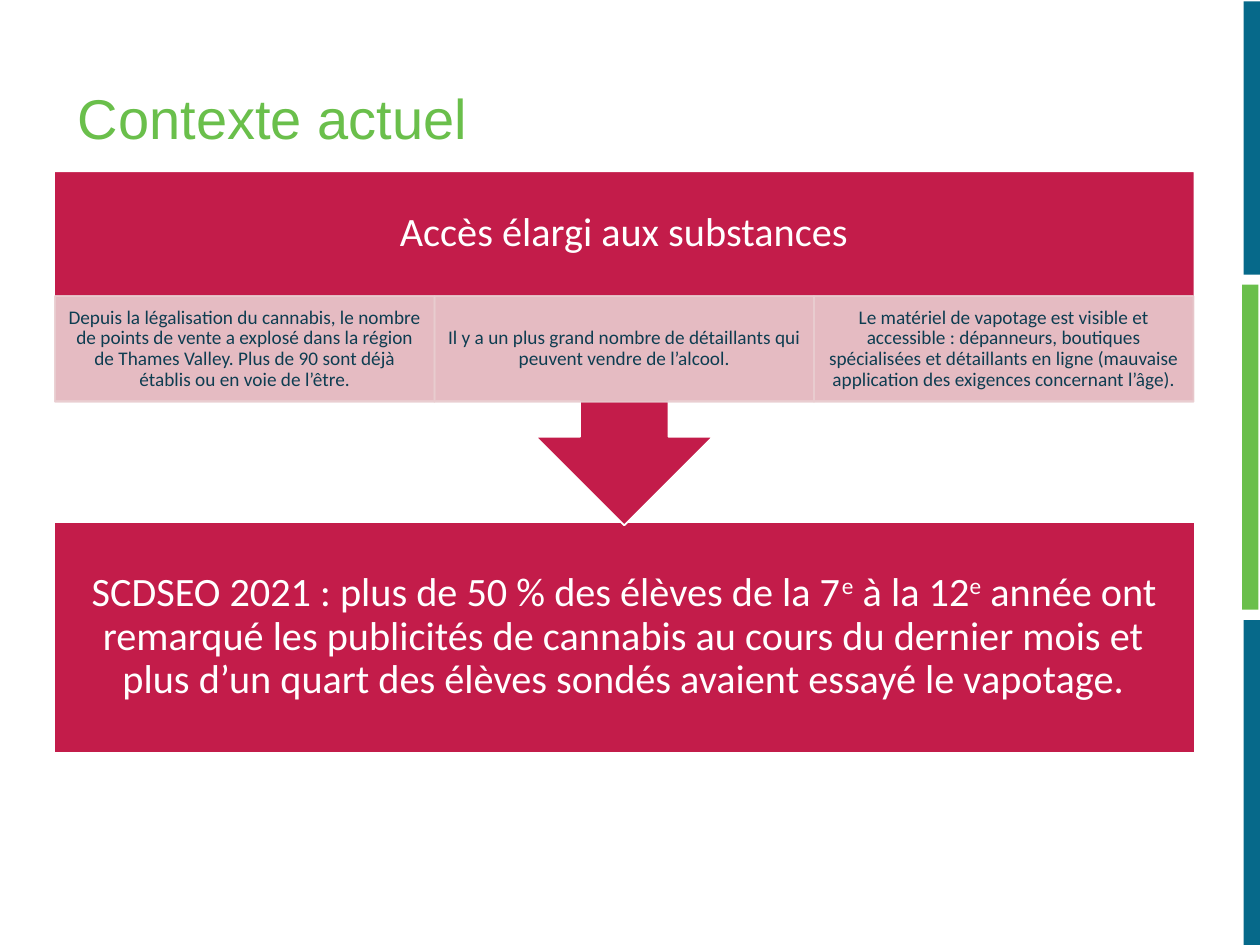
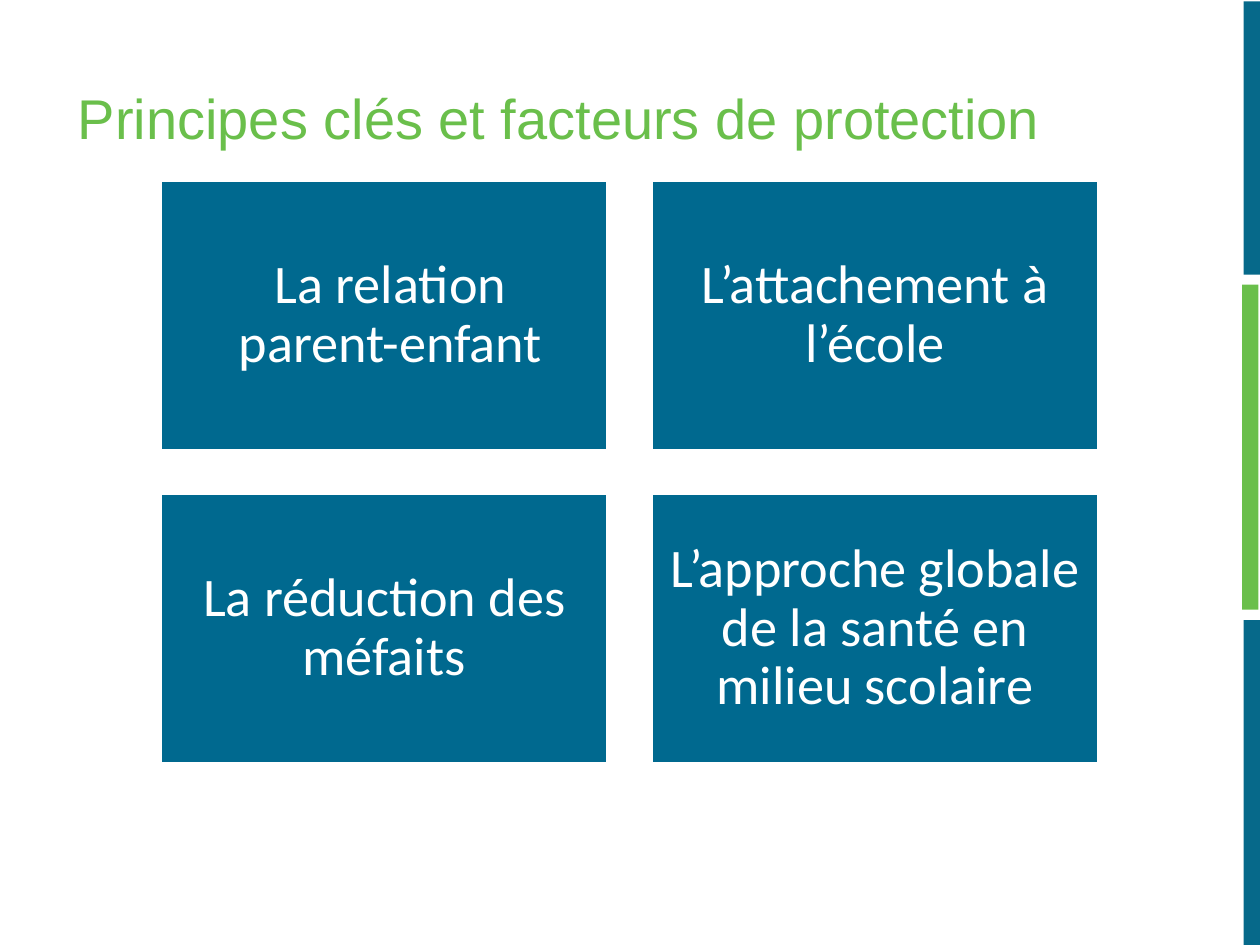
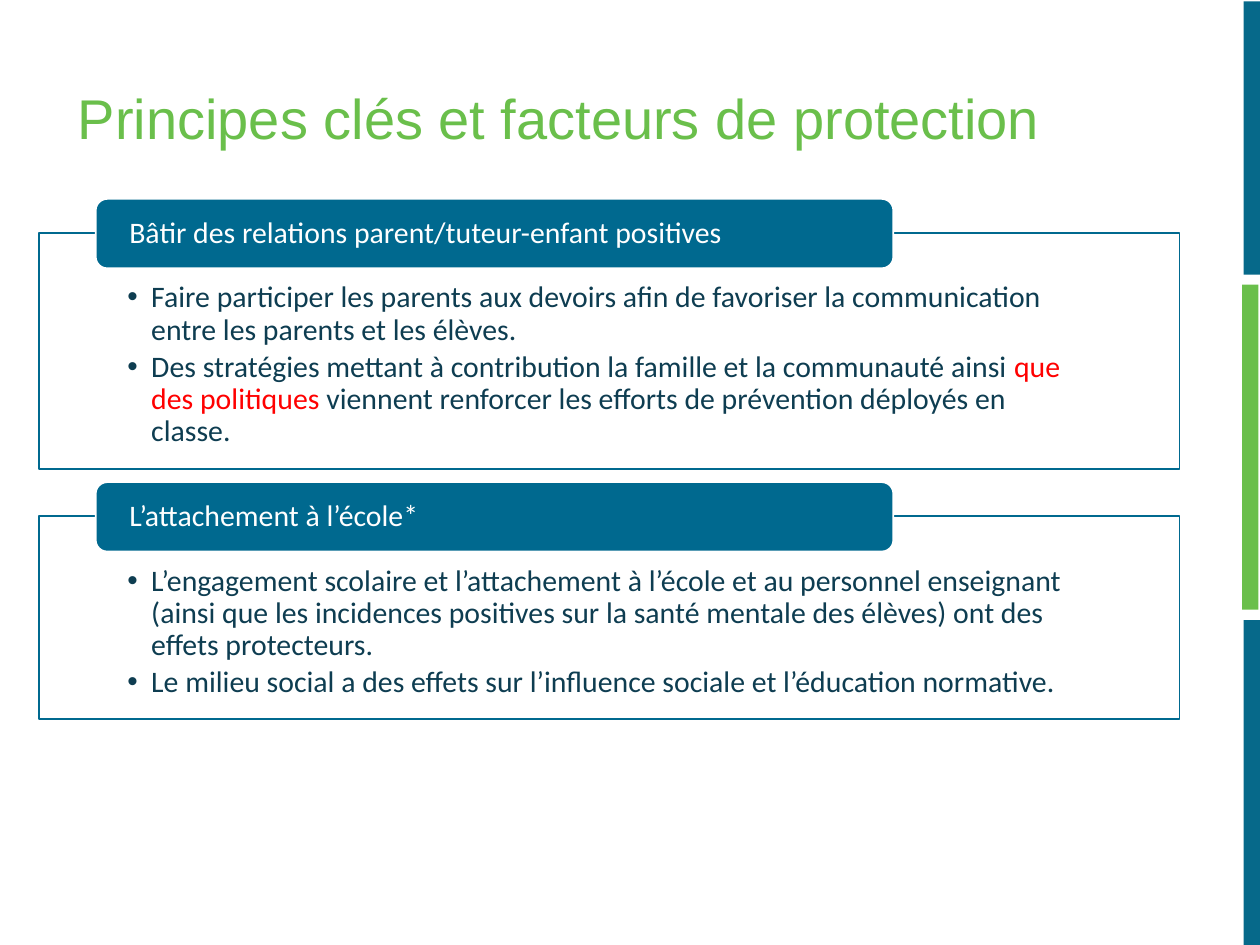
from lxml import etree
from pptx import Presentation
from pptx.dml.color import RGBColor
from pptx.enum import shapes, text
from pptx.oxml.ns import qn
from pptx.util import Cm, Pt

# Content: a paragraph is a list of (words, style) runs
ACCESS_TITLE = "Contexte actuel"
ACCESS_HEADING = "Accès élargi aux substances"
ACCESS_FACTS = [
    "Depuis la légalisation du cannabis, le nombre de points de vente a explosé dans la "
    "région de Thames Valley. Plus de 90 sont déjà établis ou en voie de l’être.",
    "Il y a un plus grand nombre de détaillants qui peuvent vendre de l’alcool.",
    "Le matériel de vapotage est visible et accessible : dépanneurs, boutiques spécialisées "
    "et détaillants en ligne (mauvaise application des exigences concernant l’âge).",
]
SURVEY = [
    ("SCDSEO 2021 : plus de 50 % des élèves de la 7", ""),
    ("e", "super"),
    (" à la 12", ""),
    ("e", "super"),
    (" année ont remarqué les publicités de cannabis au cours du dernier mois et plus "
     "d’un quart des élèves sondés avaient essayé le vapotage.", ""),
]
PRINCIPLES_TITLE = "Principes clés et facteurs de protection"
PRINCIPLES = [  # words, left indent
    ("La relation parent-enfant", 0.25),
    ("L’attachement à l’école", 0),
    ("La réduction des méfaits", 0),
    ("L’approche globale de la santé en milieu scolaire", 0),
]
FACTORS = [  # heading, frame height, bullets
    ("Bâtir des relations parent/tuteur-enfant positives", 4.75, [
        [("Faire participer les parents aux devoirs afin de favoriser la communication "
          "entre les parents et les élèves.", "")],
        [("Des stratégies mettant à contribution la famille et la communauté ainsi ", ""),
         ("que des politiques ", "red"),
         ("viennent renforcer les efforts de prévention déployés en classe.", "")],
    ]),
    ("L’attachement à l’école*", 4.09, [
        [("L’engagement scolaire et l’attachement à l’école et au personnel enseignant "
          "(ainsi que les incidences positives sur la santé mentale des élèves) ont des "
          "effets protecteurs.", "")],
        [("Le milieu social a des effets sur l’influence sociale et l’éducation "
          "normative.", "")],
    ]),
]

# Shared look
WHITE = RGBColor(0xFF, 0xFF, 0xFF)
GREEN = RGBColor(0x6A, 0xBF, 0x4B)
BAND_BLUE = RGBColor(0x06, 0x69, 0x8A)
BLUE = RGBColor(0x00, 0x69, 0x8F)
CRIMSON = RGBColor(0xC3, 0x1C, 0x4A)
PINK = RGBColor(0xE9, 0xCD, 0xD0)
NAVY = RGBColor(0x0E, 0x3D, 0x51)
RED = RGBColor(0xFF, 0x00, 0x00)
BANDS = [(25.07, 12.5, 6.55, BAND_BLUE), (25.04, 5.74, 6.55, GREEN), (25.07, 0.03, 5.51, BAND_BLUE)]
RECT = shapes.MSO_SHAPE.RECTANGLE
LEFT, CENTER = text.PP_ALIGN.LEFT, text.PP_ALIGN.CENTER
TOP, MIDDLE = text.MSO_ANCHOR.TOP, text.MSO_ANCHOR.MIDDLE


def add_box(slide, at, fill, line=None, preset=RECT):
    box = slide.shapes.add_shape(preset, *map(Cm, at))
    box.shadow.inherit = False
    box.fill.solid()
    box.fill.fore_color.rgb = fill
    if line is None:
        box.line.fill.background()
    else:
        box.line.color.rgb = line
        box.line.width = Pt(1)
    return box


def make_translucent(box, percent):
    for color in box._element.spPr.iter(qn("a:srgbClr")):
        etree.SubElement(color, qn("a:alpha")).set("val", str(percent * 1000))


def write(box, paragraphs, size, color, align=CENTER, anchor=MIDDLE,
          insets=(0.25, 0.13, 0.25, 0.13), font="Calibri", indent=0, bullet=False):
    frame = box.text_frame
    frame.word_wrap = True
    frame.vertical_anchor = anchor
    (frame.margin_left, frame.margin_top,
     frame.margin_right, frame.margin_bottom) = map(Cm, insets)
    for index, runs in enumerate(paragraphs):
        paragraph = frame.add_paragraph() if index else frame.paragraphs[0]
        paragraph.alignment = align
        paragraph.line_spacing = 0.9
        properties = paragraph._p.get_or_add_pPr()
        if indent:
            properties.set("marL", str(Cm(indent)))
        if bullet:
            properties.set("indent", str(-Cm(indent)))
            paragraph.space_after = Pt(3)
            etree.SubElement(properties, qn("a:buFont")).set("typeface", "Arial")
            etree.SubElement(properties, qn("a:buChar")).set("char", "•")
        for words, style in runs:
            run = paragraph.add_run()
            run.text = words
            run.font.name = font
            run.font.size = Pt(size)
            run.font.color.rgb = RED if style == "red" else color
            if style == "super":
                run._r.get_or_add_rPr().set("baseline", "30000")


def add_text(slide, at, words, size, color, **options):
    write(slide.shapes.add_textbox(*map(Cm, at)), [[(words, "")]], size, color, **options)


def add_slide(deck, title):
    slide = deck.slides.add_slide(deck.slide_layouts[6])
    for left, top, height, color in BANDS:
        add_box(slide, (left, top, 0.33, height), color)
    add_text(slide, (1.32, 1.02, 22.99, 2.84), title, 32, GREEN, align=LEFT, font="Arial")
    return slide


def build_access(deck):
    slide = add_slide(deck, ACCESS_TITLE)
    left, width, top = 1.09, 22.99, 3.45
    wide = (0.45,) * 4
    # Conclusion below, then the callout that points down to it
    survey = add_box(slide, (left, 10.52, width, 4.65), CRIMSON, WHITE)
    write(survey, [SURVEY], 23, WHITE, insets=wide)
    callout = add_box(slide, (left, top, width, 7.14), CRIMSON, WHITE,
                      shapes.MSO_SHAPE.UP_ARROW_CALLOUT)
    callout.rotation = 180
    add_text(slide, (left, top, width, 2.51), ACCESS_HEADING, 23, WHITE, insets=wide)
    # Row of facts
    fact_width = 7.65
    for column, words in enumerate(ACCESS_FACTS):
        fact = add_box(slide, (1.11 + column * fact_width, 5.97, fact_width, 2.13), PINK, PINK)
        make_translucent(fact, 90)
        write(fact, [[(words, "")]], 11, NAVY, insets=(0.23, 0.05, 0.23, 0.05))


def build_principles(deck):
    slide = add_slide(deck, PRINCIPLES_TITLE)
    width, height, gap = 8.99, 5.41, 0.9
    for index, (words, indent) in enumerate(PRINCIPLES):
        row, column = divmod(index, 2)
        at = (3.25 + column * (width + gap), 3.66 + row * (height + gap), width, height)
        principle = add_box(slide, at, BLUE, WHITE)
        write(principle, [[(words, "")]], 31, WHITE, insets=(0.33,) * 4, indent=indent)


def build_factors(deck):
    slide = add_slide(deck, PRINCIPLES_TITLE)
    top, gap = 4.7, 0.96
    for heading, height, bullets in FACTORS:
        details = add_box(slide, (0.79, top, 22.99, height), WHITE, BLUE)
        write(details, bullets, 17, NAVY, align=LEFT, anchor=TOP,
              insets=(1.78, 0.99, 1.78, 0.33), indent=0.48, bullet=True)
        tab = add_box(slide, (1.93, top - 0.69, 16.08, 1.4), BLUE, WHITE,
                      shapes.MSO_SHAPE.ROUNDED_RECTANGLE)
        write(tab, [[(heading, "")]], 17, WHITE, align=LEFT, insets=(0.61, 0, 0.61, 0))
        top += height + gap


def main():
    deck = Presentation()
    deck.slide_width, deck.slide_height = Cm(25.4), Cm(19.05)
    build_access(deck)
    build_principles(deck)
    build_factors(deck)
    deck.save("out.pptx")


if __name__ == "__main__":
    main()
